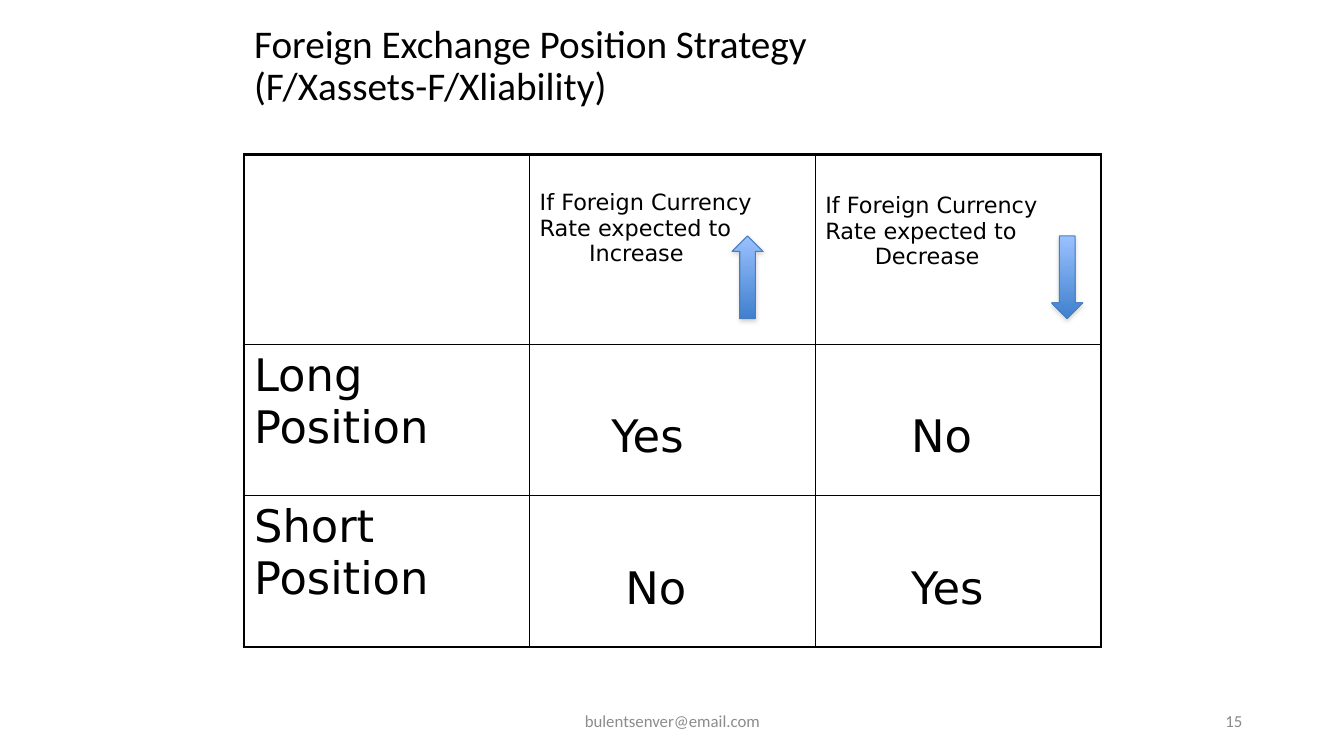
from dataclasses import dataclass

from lxml.etree import SubElement
from pptx import Presentation
from pptx.dml.color import RGBColor as RGB
from pptx.enum.shapes import MSO_SHAPE as SHAPE
from pptx.enum.text import MSO_ANCHOR as ANCHOR, MSO_AUTO_SIZE as FIT, PP_ALIGN as ALIGN
from pptx.oxml import parse_xml
from pptx.oxml.ns import nsdecls, qn
from pptx.util import Inches, Pt


@dataclass(frozen=True)
class Theme:
    """Colours, fonts and sizes of the slide."""
    ink: str = "000000"
    mail: str = "8C8C8C"
    page: str = "898989"
    light: str = "9BC1FF"
    deep: str = "3F80CD"
    edge: str = "4A7EBB"
    shade: str = "808080"
    head: str = "Calibri"
    body: str = "DejaVu Sans"
    title: int = 28
    large: int = 32
    small: int = 16
    foot: int = 12
    thin: float = 1
    thick: float = 2.25


T = Theme()


def write(frame, *lines, size, font=T.body, color=T.ink, align=ALIGN.LEFT, space=None, indent=0):
    """Fill a text frame, one paragraph a line; indent moves the last one."""
    frame.word_wrap = True
    for i, line in enumerate(lines):
        para = frame.paragraphs[0] if i == 0 else frame.add_paragraph()
        para.text = line
        para.alignment = align
        para.line_spacing = space
        for run in para.runs:
            run.font.size, run.font.name = Pt(size), font
            run.font.color.rgb = RGB.from_string(color)
    if indent:
        para._p.get_or_add_pPr().set("marL", str(Inches(indent)))


def heading(slide, box):
    """Place the title in its box."""
    title = slide.shapes.title
    title.left, title.top, title.width, title.height = map(Inches, box)
    frame = title.text_frame
    frame.vertical_anchor, frame.auto_size = ANCHOR.MIDDLE, FIT.NONE
    write(frame, "Foreign Exchange Position Strategy\v(F/Xassets-F/Xliability)",
          size=T.title, font=T.head, space=0.9)


def footer(slide, box, text, color, align):
    """Place one footer text in its box."""
    frame = slide.shapes.add_textbox(*map(Inches, box)).text_frame
    frame.vertical_anchor = ANCHOR.MIDDLE
    write(frame, text, size=T.foot, font=T.head, color=color, align=align)


def border(cell, **widths):
    """Draw the sides L, R, T and B of a cell in the given widths."""
    props = cell._tc.get_or_add_tcPr()
    for i, (side, width) in enumerate(widths.items()):
        line = parse_xml(f'<a:ln{side} {nsdecls("a")} w="{Pt(width)}"><a:solidFill>'
                         f'<a:srgbClr val="{T.ink}"/></a:solidFill></a:ln{side}>')
        props.insert(i, line)


def arrow(slide, box, kind):
    """Place a shaded block arrow in its box."""
    shape = slide.shapes.add_shape(kind, *map(Inches, box))
    shape.shadow.inherit = False
    shape.fill.gradient()
    shape.fill.gradient_angle = 270
    for stop, color in zip(shape.fill.gradient_stops, (T.light, T.deep)):
        stop.color.rgb = RGB.from_string(color)
    shape.line.color.rgb = RGB.from_string(T.edge)
    shape.line.width = Pt(0.75)
    list_ = shape._element.spPr.find(qn("a:effectLst"))
    drop = SubElement(list_, qn("a:outerShdw"), blurRad=str(Pt(3.1)), dist=str(Pt(1.8)),
                      dir="5400000", rotWithShape="0")
    tint = SubElement(drop, qn("a:srgbClr"), val=T.shade)
    SubElement(tint, qn("a:alpha"), val="35000")


def matrix(slide, box):
    """Place the strategy table and its two arrows in the box."""
    left, top, width, height = box
    grid = slide.shapes.add_table(3, 3, *map(Inches, box)).table
    grid.first_row = grid.horz_banding = False
    for row, tall in zip(grid.rows, (1.89, 1.5, 1.5)):
        row.height = Inches(tall)
    for r in range(3):
        for c in range(3):
            cell = grid.cell(r, c)
            cell.fill.background()
            border(cell, L=T.thick if c == 0 and r else T.thin,
                   R=T.thick if c == 2 else T.thin,
                   T=T.thick if r == 0 else T.thin,
                   B=T.thick if r == 2 else T.thin)

    for c, word, drop in ((1, "Increase", 0.35), (2, "Decrease", 0.38)):
        cell = grid.cell(0, c)
        cell.margin_top = Inches(drop)
        write(cell.text_frame, "If Foreign Currency Rate expected to", word,
              size=T.small, indent=0.49)

    rows = (("Long Position", ("Yes", 0.81), ("No", 0.95)),
            ("Short Position", ("No", 0.95), ("Yes", 0.95)))
    for r, (name, *marks) in enumerate(rows, 1):
        write(grid.cell(r, 0).text_frame, name, size=T.large)
        for c, (mark, inset) in enumerate(marks, 1):
            cell = grid.cell(r, c)
            cell.margin_left, cell.margin_top = Inches(inset), Inches(0.66)
            write(cell.text_frame, mark, size=T.large)

    for shift, kind in ((4.84, SHAPE.UP_ARROW), (8.01, SHAPE.DOWN_ARROW)):
        arrow(slide, (left + shift, top + 0.81, 0.31, 0.82), kind)


def main():
    """Build the slide and save it."""
    deck = Presentation()
    deck.slide_width, deck.slide_height = Inches(13.33), Inches(7.5)
    slide = deck.slides.add_slide(deck.slide_layouts[5])
    footer(slide, (4.42, 6.95, 4.5, 0.4), "bulentsenver@email.com", T.mail, ALIGN.CENTER)
    footer(slide, (9.42, 6.95, 3, 0.4), "15", T.page, ALIGN.RIGHT)
    heading(slide, (2.42, 0.04, 8.5, 1.25))
    matrix(slide, (2.42, 1.53, 8.5, 4.89))
    deck.save("out.pptx")


if __name__ == "__main__":
    main()
